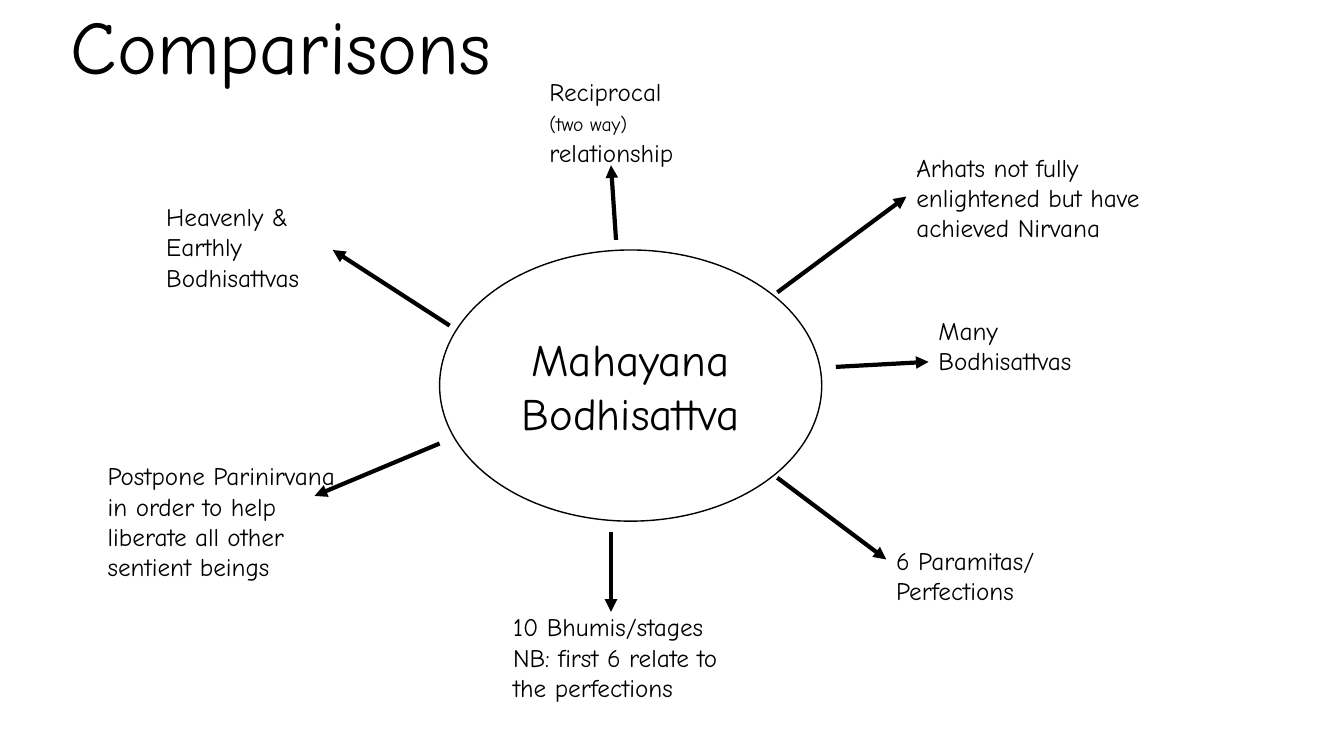
"""Build the Mahayana Bodhisattva comparison mind map."""
import pptx
import pptx.util
import pptx.dml.color
import pptx.enum.shapes
import pptx.enum.text
import pptx.oxml.ns
import lxml.etree

PX = 9144
FONT = "Comic Neue"
BLACK = pptx.dml.color.RGBColor(0, 0, 0)
WHITE = pptx.dml.color.RGBColor(255, 255, 255)
CENTER = pptx.enum.text.PP_ALIGN.CENTER
ANCHOR = pptx.enum.text.MSO_ANCHOR

deck = pptx.Presentation()
deck.slide_width = 1333 * PX
deck.slide_height = 750 * PX
page = deck.slides.add_slide(deck.slide_layouts[6])


def style(font, size):
    font.name = FONT
    font.size = pptx.util.Pt(size)
    font.color.rgb = BLACK


def add_text(bounds, lines, size):
    box = page.shapes.add_textbox(*(length * PX for length in bounds))
    frame = box.text_frame
    frame.word_wrap = True
    frame.text = "\n".join(lines)
    for para in frame.paragraphs:
        style(para.font, size)
    return frame


title = add_text((17, 28, 523, 67), ["Comparisons"], 54)
title.vertical_anchor = ANCHOR.BOTTOM
title.paragraphs[0].alignment = CENTER
title.paragraphs[0].line_spacing = 0.9

hub = page.shapes.add_shape(
    pptx.enum.shapes.MSO_SHAPE.OVAL, 436 * PX, 248 * PX, 379 * PX, 269 * PX)
hub.shadow.inherit = False
hub.fill.solid()
hub.fill.fore_color.rgb = WHITE
hub.line.color.rgb = BLACK
hub.line.width = pptx.util.Pt(1)
hub.text_frame.word_wrap = True
hub.text_frame.vertical_anchor = ANCHOR.MIDDLE
hub.text_frame.text = "Mahayana Bodhisattva"
hub.text_frame.paragraphs[0].alignment = CENTER
style(hub.text_frame.paragraphs[0].font, 32)

ideas = [
    ((899, 146, 256, 131), ["Arhats not fully enlightened but have achieved Nirvana"]),
    ((921, 308, 200, 71), ["Many Bodhisattvas"]),
    ((879, 536, 180, 71), ["6 Paramitas/ Perfections"]),
    ((499, 602, 238, 101), ["10 Bhumis/stages", "NB: first 6 relate to the perfections"]),
    ((97, 452, 256, 162),
     ["Postpone Parinirvana in order to help liberate all other sentient beings"]),
    ((155, 195, 175, 101), ["Heavenly & Earthly Bodhisattvas"]),
]
for bounds, lines in ideas:
    add_text(bounds, lines, 18)

reciprocal = add_text((535, 71, 169, 101), [""], 18).paragraphs[0]
for words, size in [("Reciprocal ", 18), ("(two way)", 14), (" relationship", 18)]:
    span = reciprocal.add_run()
    span.text = words
    style(span.font, size)

arrows = [
    (611, 238, 606, 164),
    (771, 290, 899, 195),
    (829, 364, 921, 359),
    (446, 323, 330, 248),
    (436, 440, 312, 492),
    (771, 474, 879, 555),
    (606, 528, 606, 607),
]
for ends in arrows:
    arrow = page.shapes.add_connector(
        pptx.enum.shapes.MSO_CONNECTOR.STRAIGHT, *(length * PX for length in ends))
    arrow.line.color.rgb = BLACK
    arrow.line.width = pptx.util.Pt(3)
    outline = arrow.line._get_or_add_ln()
    lxml.etree.SubElement(outline, pptx.oxml.ns.qn("a:tailEnd"), type="triangle")
    lxml.etree.SubElement(arrow._element.spPr, pptx.oxml.ns.qn("a:effectLst"))

deck.save("out.pptx")
